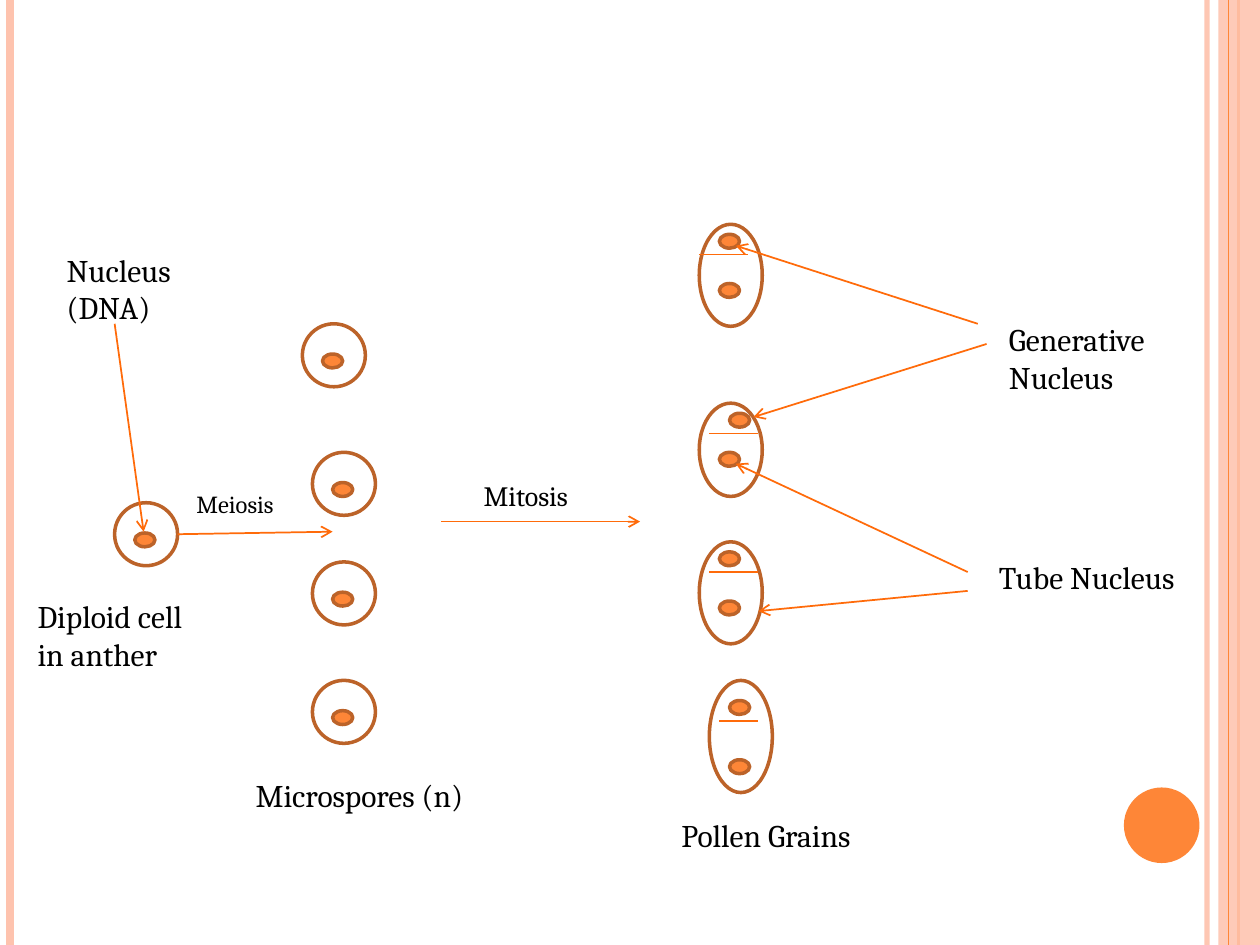
"""Build the slide on how pollen grains form, on a grid of 100 by 75 units."""
from lxml import etree
from pptx import Presentation
from pptx.dml.color import RGBColor
from pptx.enum.shapes import MSO_CONNECTOR, MSO_SHAPE
from pptx.oxml.ns import qn
from pptx.util import Inches, Pt

LINE = MSO_CONNECTOR.STRAIGHT
DISC = MSO_SHAPE.FLOWCHART_CONNECTOR
OVAL = MSO_SHAPE.OVAL
RECT = MSO_SHAPE.RECTANGLE
WHITE = RGBColor(0xFF, 0xFF, 0xFF)
BLACK = RGBColor(0, 0, 0)
PEACH = RGBColor(0xFE, 0xC3, 0xAE)
ORANGE = RGBColor(0xFE, 0x86, 0x37)
BRIGHT = RGBColor(0xFF, 0x6B, 0x0A)
BROWN = RGBColor(0xBC, 0x63, 0x29)
FONT = "Cambria"
UNIT = Inches(0.1)
COLS, ROWS = 100, 75
CELL = 5

SPORES = [(24, 25.7), (24.8, 35.9), (24.8, 44.6), (24.8, 54)]
GRAINS = [
    (55.5, 17.8, 8.1, (0, 3.9, 2.4), [(1.6, 0.8), (1.6, 4.7)]),
    (55.5, 32, 7.4, (0.8, 4.7, 2.4), [(2.4, 0.8), (1.6, 3.9)]),
    (55.5, 43, 8.1, (0.8, 4.7, 2.4), [(1.6, 0.8), (1.6, 4.7)]),
    (56.3, 54, 8.9, (0.8, 3.9, 3.2), [(1.6, 1.6), (1.6, 6.3)]),
]
ARROWS = [
    (14.1, 42.4, 26.4, 42.2), (35, 41.4, 50.8, 41.4),
    (77.6, 25.7, 58.4, 19.5), (78.3, 27.3, 59.8, 33.1),
    (76.8, 45.4, 58.4, 36.8), (76.8, 46.9, 60.2, 48.5),
    (9.1, 25.7, 11.4, 42.2),
]
LABELS = [
    ("Meiosis", 14.6, 38.3, 8.9, 3.4, 14),
    ("Mitosis", 37.4, 37.5, 9.6, 3.7, 16),
    ("Generative Nucleus", 79.1, 24.9, 15.7, 7.1, 18),
    ("Tube Nucleus", 78.3, 43.8, 18.1, 4, 18),
    ("Diploid cell in anther", 2, 46.9, 15.7, 7.1, 18),
    ("Microspores (n)", 19.3, 61.1, 20.1, 4, 18),
    ("Pollen Grains", 53.1, 64.3, 18, 4, 18),
    ("Nucleus (DNA)", 4.3, 19.4, 15.7, 7.1, 18),
]


def grid(*units):
    """Turn grid units into lengths."""
    return [round(u * UNIT) for u in units]


def fade(fmt, share):
    """Make a solid colour partly transparent."""
    for clr in fmt.iter(qn("a:srgbClr")):
        etree.SubElement(clr, qn("a:alpha"), val=str(share * 1000))


def shape(slide, kind, x, y, w, h, fill, edge=None):
    """Add a filled shape, with a brown or other edge on request."""
    form = slide.shapes.add_shape(kind, *grid(x, y, w, h))
    form.shadow.inherit = False
    form.fill.solid()
    form.fill.fore_color.rgb = fill
    if edge:
        form.line.color.rgb = edge
        form.line.width = Pt(2)
    else:
        form.line.fill.background()
    return form


def line(slide, ends, color=BRIGHT, width=1, arrow=False):
    """Add a straight line, with an open arrowhead on request."""
    link = slide.shapes.add_connector(LINE, *grid(*ends))
    link.line.color.rgb = color
    link.line.width = Pt(width)
    props = link._element.spPr
    etree.SubElement(props, qn("a:effectLst"))
    if arrow:
        etree.SubElement(props.find(qn("a:ln")), qn("a:tailEnd"), type="arrow")
    return link


def label(slide, text, x, y, w, h, size):
    """Add a black text label."""
    frame = slide.shapes.add_textbox(*grid(x, y, w, h)).text_frame
    frame.word_wrap = True
    par = frame.paragraphs[0]
    par.text = text
    par.font.name = FONT
    par.font.size = Pt(size)
    par.font.color.rgb = BLACK


def cell(slide, x, y, h, spots):
    """Add a cell with a nucleus at each offset."""
    shape(slide, DISC, x, y, CELL, h, WHITE, BROWN)
    for dx, dy in spots:
        shape(slide, DISC, x + dx, y + dy, 1.6, 1.1, ORANGE, BROWN)


def grain(slide, x, y, h, wall, spots):
    """Add a pollen grain with its inner wall."""
    cell(slide, x, y, h, spots)
    left, right, drop = wall
    line(slide, (x + left, y + drop, x + right, y + drop))


def frame(slide):
    """Draw the side bands and the corner disc."""
    def rule(x, color, width):
        return line(slide, (x, 0, x, ROWS), color, width)

    fade(rule(95.8, PEACH, 3)._element, 93)
    rule(0.8, PEACH, 4.5)
    rule(98.3, ORANGE, 1.5)
    band = shape(slide, RECT, 96.7, 0, COLS - 96.7, ROWS, PEACH)
    fade(band._element, 87)
    rule(97.5, ORANGE, 0.75)
    shape(slide, OVAL, 89.2, 62.5, 6, 6, ORANGE)


def main():
    """Build and save the slide."""
    deck = Presentation()
    deck.slide_width, deck.slide_height = grid(COLS, ROWS)
    slide = deck.slides.add_slide(deck.slide_layouts[6])
    frame(slide)
    for x, y in [(9.1, 39.9)] + SPORES:
        cell(slide, x, y, CELL, [(1.6, 2.4)])
    for item in GRAINS:
        grain(slide, *item)
    for ends in ARROWS:
        line(slide, ends, arrow=True)
    for item in LABELS:
        label(slide, *item)
    deck.save("out.pptx")


if __name__ == "__main__":
    main()
